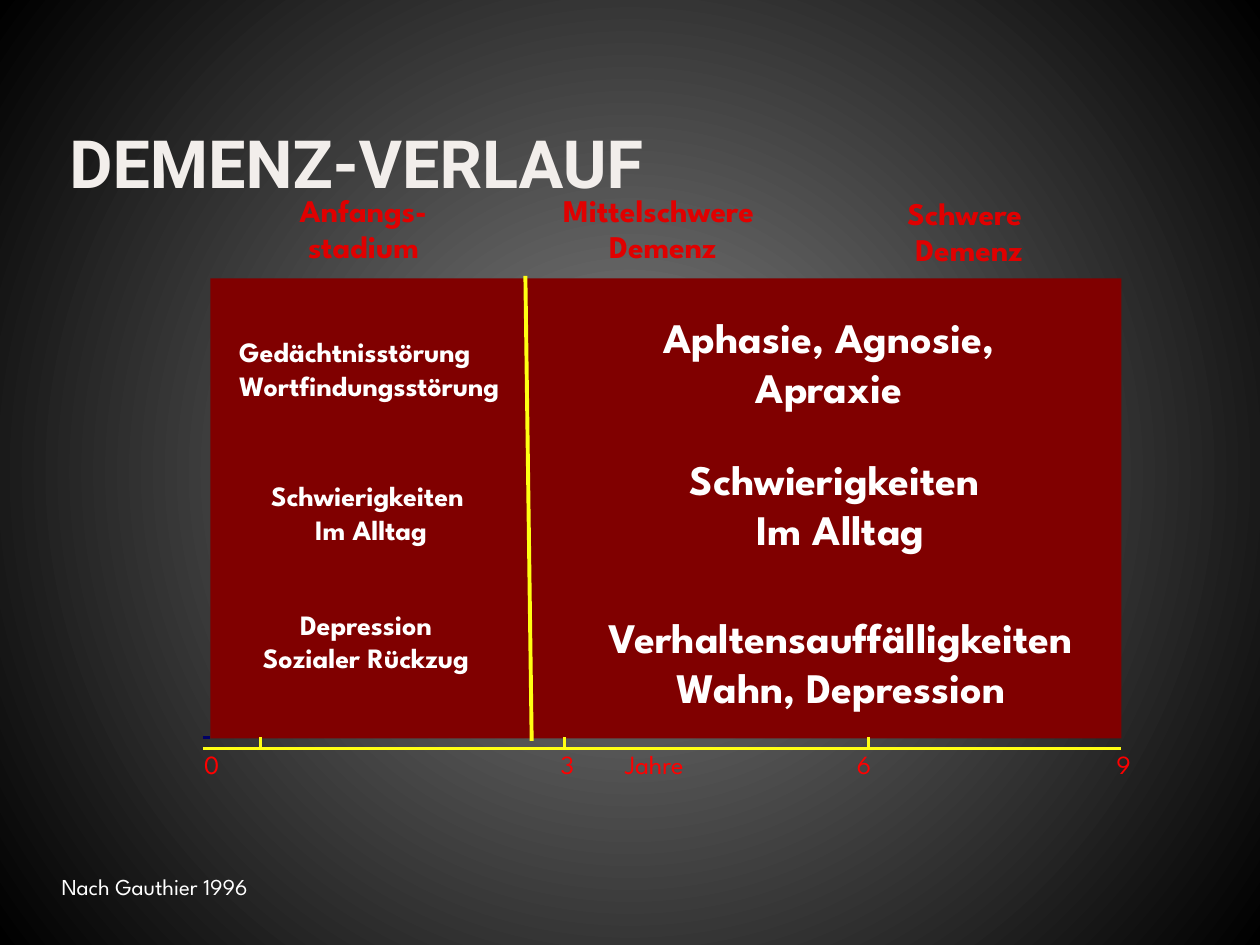
from pptx import Presentation
from pptx.dml.color import RGBColor
from pptx.enum.shapes import MSO_CONNECTOR, MSO_SHAPE
from pptx.enum.text import MSO_ANCHOR, PP_ALIGN
from pptx.oxml import parse_xml
from pptx.oxml.ns import nsdecls, qn
from pptx.util import Inches, Pt

WHITE = RGBColor(0xFF, 0xFF, 0xFF)
CREAM = RGBColor(0xF2, 0xEE, 0xEB)
RED = RGBColor(0xE0, 0x00, 0x00)
BRIGHT = RGBColor(0xFF, 0x00, 0x00)
MAROON = RGBColor(0x80, 0x00, 0x00)
YELLOW = RGBColor(0xFF, 0xFF, 0x13)
NAVY = RGBColor(0x00, 0x00, 0x66)
GREY = RGBColor(0x84, 0x84, 0x84)
BLACK = RGBColor(0x00, 0x00, 0x00)
FONT = "League Spartan"

# Text, then left, top, width, height
STAGES = [
    ("Anfangs-\nstadium", 1.75, 1.49, 2.27, 0.67),
    ("Mittelschwere \nDemenz", 4.12, 1.49, 2.28, 0.67),
    ("Schwere \nDemenz", 6.55, 1.51, 2.28, 0.67),
]
EARLY = [
    ("Schwierigkeiten \nIm Alltag", 1.95, 3.75, 1.99, 0.64),
    ("Depression\nSozialer Rückzug", 1.9, 4.77, 2.01, 0.64),
]
LATE = [
    ("Aphasie, Agnosie,\nApraxie", 5, 2.42, 3.16, 0.91),
    ("Schwierigkeiten \nIm Alltag", 5.23, 3.55, 2.88, 0.91),
    ("Verhaltensauffälligkeiten\nWahn, Depression", 4.45, 4.8, 4.45, 0.91),
]
MEMORY = ("Gedächtnisstörung\nWortfindungsstörung", 1.8, 2.61, 2.4, 0.64)
# Text, left, width
SCALE = [("0", 1.62, 0.12), ("3", 4.45, 0.12), ("Jahre", 4.96, 0.6),
         ("6", 6.8, 0.12), ("9", 8.86, 0.12)]
TICKS = [2.07 + 2.41 * i for i in range(3)]
# Start x, y, end x, y, colour, width
LINES = [
    (1.61, 5.85, 1.67, 5.85, NAVY, 1.63),
    (1.61, 5.94, 8.9, 5.94, YELLOW, 1.63),
    (4.22, 5.88, 4.17, 2.19, YELLOW, 2.25),
] + [(x, 5.93, x, 5.85, YELLOW, 1.63) for x in TICKS]


def paint_back(slide):
    """Fill the background with a gradient from the centre outwards."""
    fill = slide.background.fill
    fill.gradient()
    for stop, color in zip(fill.gradient_stops, (GREY, BLACK)):
        stop.color.rgb = color
    lin = next(slide.element.iter(qn("a:lin")))
    lin.getparent().replace(lin, parse_xml(
        f'<a:path {nsdecls("a")} path="circle">'
        '<a:fillToRect l="50000" t="50000" r="50000" b="50000"/></a:path>'))


def add_text(slide, text, x, y, w, h, size, color, bold=False,
             align=PP_ALIGN.LEFT, font=FONT, inset=(0.1, 0.05),
             anchor=MSO_ANCHOR.TOP, space=None):
    box = slide.shapes.add_textbox(Inches(x), Inches(y), Inches(w), Inches(h))
    frame = box.text_frame
    frame.word_wrap = True
    frame.vertical_anchor = anchor
    frame.margin_left = frame.margin_right = Inches(inset[0])
    frame.margin_top = frame.margin_bottom = Inches(inset[1])
    frame.text = text
    for para in frame.paragraphs:
        para.alignment = align
        para.line_spacing = space
        for run in para.runs:
            run.font.name = font
            run.font.size = Pt(size)
            run.font.bold = bold
            run.font.color.rgb = color


def add_line(slide, x1, y1, x2, y2, color, width):
    line = slide.shapes.add_connector(
        MSO_CONNECTOR.STRAIGHT, Inches(x1), Inches(y1), Inches(x2), Inches(y2))
    line.line.color.rgb = color
    line.line.width = Pt(width)
    line.element.spPr.append(parse_xml(f'<a:effectLst {nsdecls("a")}/>'))


def main():
    deck = Presentation()
    deck.slide_width, deck.slide_height = Inches(10), Inches(7.5)
    slide = deck.slides.add_slide(deck.slide_layouts[6])
    paint_back(slide)

    panel = slide.shapes.add_shape(
        MSO_SHAPE.RECTANGLE, Inches(1.67), Inches(2.21), Inches(7.23), Inches(3.65))
    panel.shadow.inherit = False
    panel.fill.solid()
    panel.fill.fore_color.rgb = MAROON
    panel.line.fill.background()

    add_text(slide, "DEMENZ-VERLAUF", 0.5, 0.35, 7.92, 1.25, 38, CREAM, True,
             font="Roboto", inset=(0.05, 0), anchor=MSO_ANCHOR.BOTTOM)
    add_text(slide, "Nach Gauthier 1996", 0.39, 6.88, 4.93, 0.34, 13, WHITE)
    add_text(slide, *MEMORY, 16, WHITE, True)
    for group, size, color, space in ((STAGES, 18, RED, 0.95),
                                      (EARLY, 16, WHITE, None),
                                      (LATE, 24, WHITE, None)):
        for item in group:
            add_text(slide, *item, size, color, True, PP_ALIGN.CENTER, space=space)
    for text, x, w in SCALE:
        add_text(slide, text, x, 5.94, w, 0.25, 15, BRIGHT, inset=(0, 0))
    for line in LINES:
        add_line(slide, *line)

    deck.save("out.pptx")


if __name__ == "__main__":
    main()
